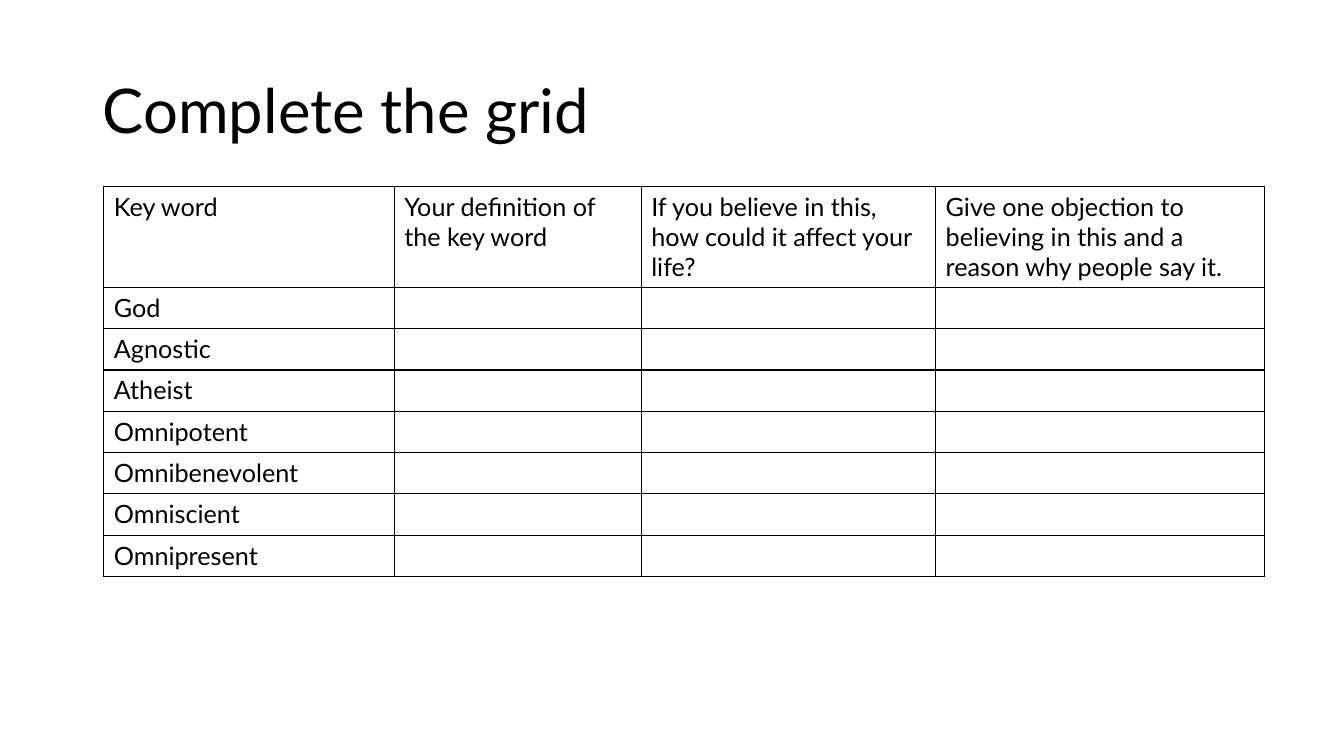
from dataclasses import dataclass

from lxml import etree
from pptx import Presentation
from pptx import util as u
from pptx.dml.color import RGBColor
from pptx.enum import text
from pptx.oxml import ns
from pptx.slide import Slide
from pptx.table import _Cell
from pptx.text.text import _Paragraph

BLACK = RGBColor(0x00, 0x00, 0x00)
WHITE = RGBColor(0xFF, 0xFF, 0xFF)
FONT = "Lato"
HEADER_HEIGHT = u.Inches(1)
ROW_HEIGHT = u.Inches(0.41)


@dataclass(frozen=True)
class Column:
    heading: str
    width: float


COLUMNS = [
    Column("Key word", 2.88),
    Column("Your definition of the key word", 2.45),
    Column("If you believe in this, how could it affect your life?", 2.92),
    Column("Give one objection to believing in this and a reason why people say it.", 3.26),
]
KEY_WORDS = [
    "God", "Agnostic", "Atheist", "Omnipotent",
    "Omnibenevolent", "Omniscient", "Omnipresent",
]


def write(paragraph: _Paragraph, words: str, size: int) -> None:
    """Add one run if there are words, and format the whole paragraph."""
    fonts = [paragraph.font]
    if words:
        run = paragraph.add_run()
        run.text = words
        fonts.append(run.font)
    for font in fonts:
        font.name = FONT
        font.size = u.Pt(size)
        font.color.rgb = BLACK


def add_borders(cell: _Cell) -> None:
    properties = cell._tc.get_or_add_tcPr()
    for position, side in enumerate(("lnL", "lnR", "lnT", "lnB")):
        line = etree.Element(ns.qn(f"a:{side}"), w=str(u.Pt(1)))
        fill = etree.SubElement(line, ns.qn("a:solidFill"))
        etree.SubElement(fill, ns.qn("a:srgbClr"), val=str(BLACK))
        properties.insert(position, line)


def add_title(slide: Slide) -> None:
    title = slide.shapes.title
    title.left, title.top = u.Inches(0.92), u.Inches(0.4)
    title.width, title.height = u.Inches(11.5), u.Inches(1.45)
    frame = title.text_frame
    frame.word_wrap = True
    frame.vertical_anchor = text.MSO_ANCHOR.MIDDLE
    paragraph = frame.paragraphs[0]
    paragraph.alignment = text.PP_ALIGN.LEFT
    paragraph.line_spacing = 0.9
    write(paragraph, "Complete the grid", 44)


def add_grid(slide: Slide) -> None:
    blanks = [""] * (len(COLUMNS) - 1)
    rows = [[column.heading for column in COLUMNS]]
    rows += [[key_word, *blanks] for key_word in KEY_WORDS]
    table = slide.shapes.add_table(
        len(rows), len(COLUMNS), u.Inches(1.03), u.Inches(1.85),
        u.Inches(sum(column.width for column in COLUMNS)),
        HEADER_HEIGHT + ROW_HEIGHT * len(KEY_WORDS),
    ).table
    table.first_row = table.horz_banding = False
    for table_column, column in zip(table.columns, COLUMNS):
        table_column.width = u.Inches(column.width)
    for row_number, row in enumerate(rows):
        table.rows[row_number].height = ROW_HEIGHT if row_number else HEADER_HEIGHT
        for column_number, words in enumerate(row):
            cell = table.cell(row_number, column_number)
            cell.fill.solid()
            cell.fill.fore_color.rgb = WHITE
            add_borders(cell)
            write(cell.text_frame.paragraphs[0], words, 18)


def main() -> None:
    presentation = Presentation()
    presentation.slide_width = u.Inches(13.33)
    presentation.slide_height = u.Inches(7.5)
    slide = presentation.slides.add_slide(presentation.slide_layouts[5])
    add_title(slide)
    add_grid(slide)
    presentation.save("out.pptx")


if __name__ == "__main__":
    main()
